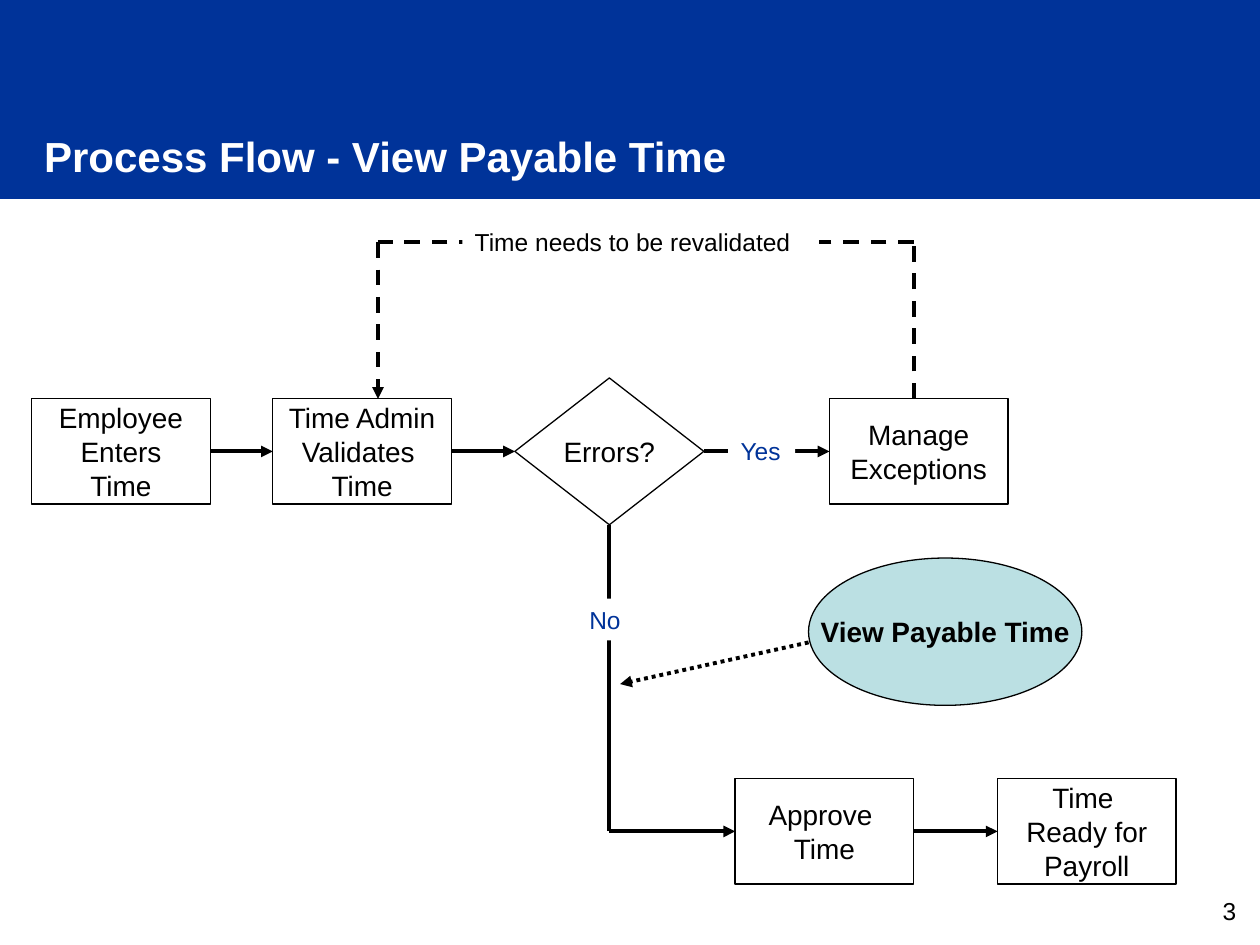
from dataclasses import dataclass

from lxml.etree import SubElement
from pptx import Presentation
from pptx.dml.color import RGBColor
from pptx.enum.dml import MSO_LINE_DASH_STYLE as Dash
from pptx.enum.shapes import MSO_CONNECTOR, MSO_SHAPE as Shape
from pptx.enum.text import MSO_ANCHOR as Anchor, PP_ALIGN as Align
from pptx.oxml.ns import qn
from pptx.util import Cm, Pt


@dataclass(frozen=True)
class Theme:
    blue: RGBColor = RGBColor(0x00, 0x33, 0x99)
    teal: RGBColor = RGBColor(0xBB, 0xE0, 0xE3)
    black: RGBColor = RGBColor(0, 0, 0)
    white: RGBColor = RGBColor(255, 255, 255)
    font: str = "Arial"
    title: int = 24
    step: int = 16
    label: int = 14
    outline: float = 0.75
    arrow: float = 2.25


@dataclass(frozen=True)
class Box:
    """A region of the slide, in centimetres."""
    x: float
    y: float
    w: float
    h: float

    def inner(self, x, y, w, h):
        return Box(self.x + x, self.y + y, w, h)

    def lengths(self):
        return Cm(self.x), Cm(self.y), Cm(self.w), Cm(self.h)


T = Theme()


def write(sp, lines, size, color=T.black, bold=False, align=Align.LEFT,
          anchor=Anchor.TOP, wrap=True):
    tf = sp.text_frame
    tf.word_wrap = wrap
    tf.vertical_anchor = anchor
    tf.text = "\n".join(lines)
    for p in tf.paragraphs:
        p.alignment = align
        p.font.name, p.font.size, p.font.bold = T.font, Pt(size), bold
        p.font.color.rgb = color


def add_shape(s, kind, box, fill=None, outlined=False):
    sp = s.shapes.add_shape(kind, *box.lengths())
    sp.shadow.inherit = False
    if fill is None:
        sp.fill.background()
    else:
        sp.fill.solid()
        sp.fill.fore_color.rgb = fill
    if outlined:
        sp.line.color.rgb = T.black
        sp.line.width = Pt(T.outline)
    else:
        sp.line.fill.background()
    return sp


def add_step(s, kind, box, lines, fill=None, bold=False):
    sp = add_shape(s, kind, box, fill, outlined=True)
    write(sp, lines, T.step, bold=bold, align=Align.CENTER,
          anchor=Anchor.MIDDLE, wrap=False)


def add_label(s, box, text, color):
    sp = add_shape(s, Shape.RECTANGLE, box, T.white)
    write(sp, [text], T.label, color)


def add_line(s, box, start, end, head=False, dash=None):
    (x1, y1), (x2, y2) = start, end
    line = s.shapes.add_connector(
        MSO_CONNECTOR.STRAIGHT, Cm(box.x + x1), Cm(box.y + y1),
        Cm(box.x + x2), Cm(box.y + y2))
    line.line.color.rgb = T.black
    line.line.width = Pt(T.arrow)
    if dash:
        line.line.dash_style = dash
    if head:
        SubElement(line.line._get_or_add_ln(), qn("a:tailEnd"), type="triangle")
    SubElement(line._element.spPr, qn("a:effectLst"))


def header(s, box):
    add_shape(s, Shape.RECTANGLE, box, T.blue)
    title = s.shapes.add_textbox(*box.inner(0.64, 2.34, 22.86, 1.6).lengths())
    write(title, ["Process Flow - View Payable Time"], T.title, T.white,
          bold=True, anchor=Anchor.MIDDLE)


def page_number(s, box):
    write(s.shapes.add_textbox(*box.lengths()), ["3"], T.label, align=Align.RIGHT)


def process_flow(s, box):
    step_w, step_h = 3.6, 2.12
    top_row, bottom_row, loop_y = 4.65, 12.31, 0.43
    employee, admin, manage = 0, 4.86, 16.08
    approve, ready = 14.18, 19.47
    errors, errors_w, errors_h = 9.74, 3.81, 2.96
    errors_mid = errors + errors_w / 2
    loop_left, loop_right = 6.98, 17.78

    # Highlighted activity and its pointer
    add_step(s, Shape.OVAL, box.inner(15.66, 6.8, 5.51, 2.97),
             ["View Payable Time"], T.teal, bold=True)
    add_line(s, box, (15.66, 8.5), (11.86, 9.34), True, Dash.ROUND_DOT)

    # Steps and decision
    for x, mid, lines in (
            (employee, top_row, ["Employee", "Enters", "Time"]),
            (admin, top_row, ["Time Admin", "Validates ", "Time"]),
            (manage, top_row, ["Manage", "Exceptions"]),
            (approve, bottom_row, ["Approve ", "Time"]),
            (ready, bottom_row, ["Time ", "Ready for", "Payroll"])):
        add_step(s, Shape.RECTANGLE,
                 box.inner(x, mid - step_h / 2, step_w, step_h), lines)
    add_step(s, Shape.DIAMOND,
             box.inner(errors, top_row - errors_h / 2, errors_w, errors_h),
             ["Errors?"])

    # Arrows along the two rows
    for x1, x2, y in ((employee + step_w, admin, top_row),
                      (admin + step_w, errors, top_row),
                      (errors + errors_w, manage, top_row),
                      (errors_mid, approve, bottom_row),
                      (approve + step_w, ready, bottom_row)):
        add_line(s, box, (x1, y), (x2, y), head=True)
    add_line(s, box, (errors_mid, top_row + errors_h / 2),
             (errors_mid, bottom_row))

    # Dashed loop back to validation
    step_top = top_row - step_h / 2
    loop = [(loop_right, step_top), (loop_right, loop_y),
            (loop_left, loop_y), (loop_left, step_top)]
    for start, end in zip(loop, loop[1:]):
        add_line(s, box, start, end, end == loop[-1], Dash.DASH)

    # Labels that sit over the lines
    for x, y, w, text, color in (
            (14.04, 4.21, 1.35, "Yes", T.blue),
            (8.68, 0, 7.19, "Time needs to be revalidated", T.black),
            (10.99, 7.62, 1.27, "No", T.blue)):
        add_label(s, box.inner(x, y, w, 0.84), text, color)


def main():
    prs = Presentation()
    prs.slide_width, prs.slide_height = Cm(25.4), Cm(19.05)
    s = prs.slides.add_slide(prs.slide_layouts[6])
    header(s, Box(0, 0, 25.4, 4.01))
    page_number(s, Box(19.25, 17.93, 5.92, 1.32))
    process_flow(s, Box(0.64, 4.45, 23.07, 13.37))
    prs.save("out.pptx")


if __name__ == "__main__":
    main()
